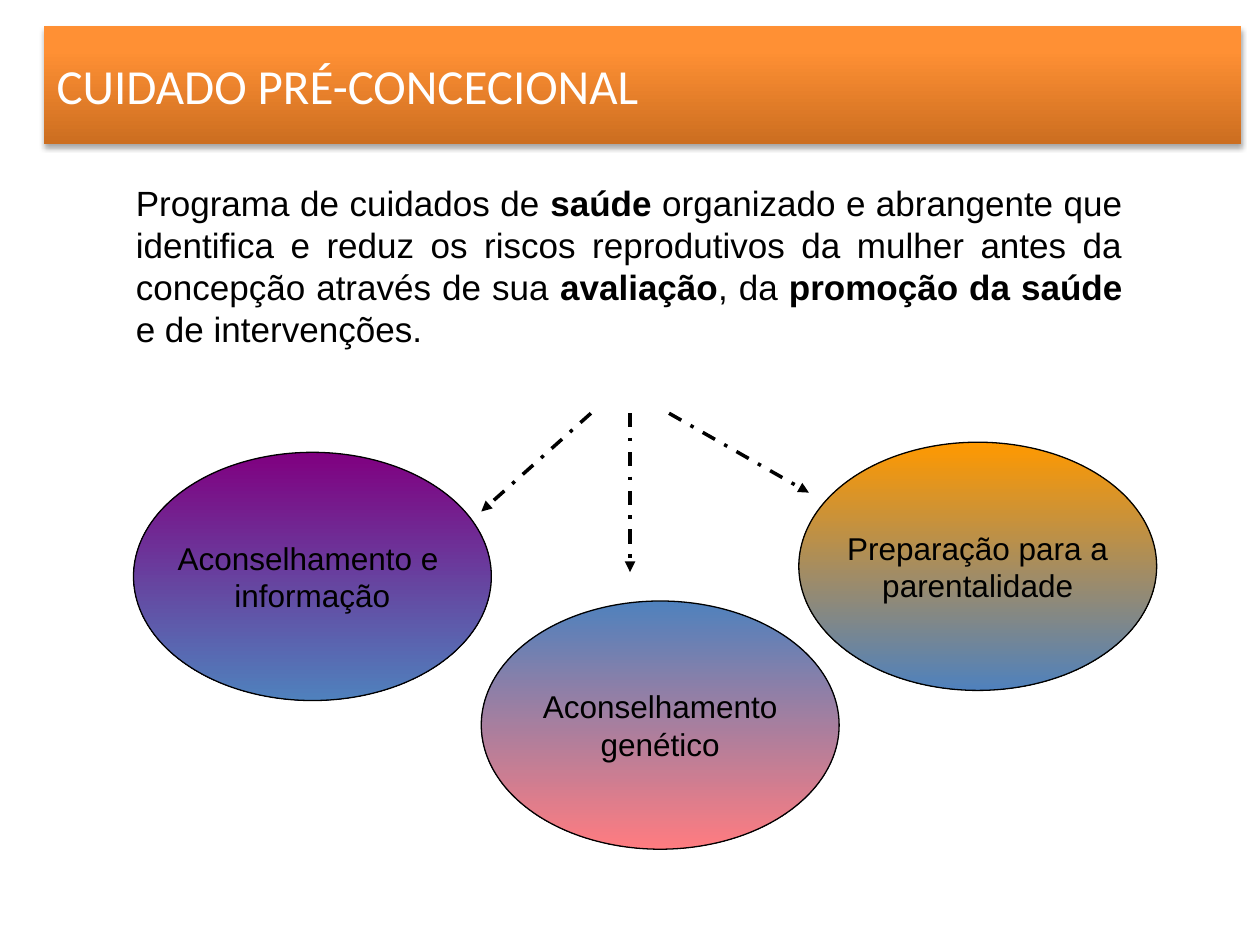
"""Build the preconception care slide."""
from copy import deepcopy
from dataclasses import dataclass

from lxml import etree
from pptx import Presentation
from pptx.dml.color import RGBColor
from pptx.enum.dml import MSO_LINE
from pptx.enum.shapes import MSO_CONNECTOR, MSO_SHAPE
from pptx.enum.text import MSO_ANCHOR, MSO_AUTO_SIZE, PP_ALIGN
from pptx.oxml import parse_xml
from pptx.oxml.ns import nsdecls, qn
from pptx.util import Inches, Pt

ELLIPSE, STRAIGHT = MSO_SHAPE.OVAL, MSO_CONNECTOR.STRAIGHT
DASH_DOT = MSO_LINE.DASH_DOT
MIDDLE = MSO_ANCHOR.MIDDLE
LEFT, CENTER, JUSTIFY = PP_ALIGN.LEFT, PP_ALIGN.CENTER, PP_ALIGN.JUSTIFY
GROW = MSO_AUTO_SIZE.SHAPE_TO_FIT_TEXT

COLORS = {
    "black": "000000", "white": "FFFFFF", "purple": "800080", "blue": "4F81BD",
    "pink": "FF7C80", "amber": "FF9900", "rust": "CC6E20",
    "orange": "FF9034", "light_orange": "FF9136",
}
TITLE_FONT = {"name": "Calibri", "size": Pt(28), "bold": False}
BODY_FONT = {"name": "Arial", "size": Pt(20)}
TOPIC_FONT = {"name": "Arial", "size": Pt(18)}
TOPIC_WIDTH, TOPIC_HEIGHT = 2.84, 1.97
ARROW_TOP = 3.28


@dataclass(frozen=True)
class Topic:
    left: float
    top: float
    lines: tuple[str, ...]
    top_color: str
    bottom_color: str


@dataclass(frozen=True)
class Arrow:
    start_x: float
    end_x: float
    end_y: float


TOPICS = (
    Topic(1.06, 3.59, ("Aconselhamento e ", "informação"), "purple", "blue"),
    Topic(3.82, 4.77, ("Aconselhamento", "genético"), "blue", "pink"),
    Topic(6.34, 3.51, ("Preparação para a", "parentalidade"), "amber", "blue"),
)
ARROWS = (Arrow(4.69, 3.82, 4.06), Arrow(5.31, 6.42, 3.91), Arrow(5, 5, 4.54))
DEFINITION = (
    ("Programa de cuidados de ", False),
    ("saúde", True),
    (" organizado e abrangente que identifica e reduz os riscos reprodutivos "
     "da mulher antes da concepção através de sua ", False),
    ("avaliação", True),
    (", da ", False),
    ("promoção da saúde", True),
    (" e de intervenções.", False),
)


def rgb(color: str) -> RGBColor:
    return RGBColor.from_string(COLORS[color])


def apply_format(target, values: dict) -> None:
    for attribute, value in values.items():
        setattr(target, attribute, value)


def add_run(paragraph, text: str, font: dict, color: str) -> None:
    run = paragraph.add_run()
    run.text = text
    apply_format(run.font, font)
    run.font.color.rgb = rgb(color)


def fill_gradient(shape, stops: tuple, angle: int) -> None:
    fill = shape.fill
    fill.gradient()
    fill.gradient_angle = angle
    stop_list = shape._element.spPr.find(".//" + qn("a:gsLst"))
    for _ in range(len(stops) - len(stop_list)):
        stop_list.append(deepcopy(stop_list[-1]))
    for stop, (position, color) in zip(fill.gradient_stops, stops):
        stop.position = position
        stop.color.rgb = rgb(color)


def draw_title(slide) -> None:
    title = slide.shapes.title
    apply_format(title, {"left": Inches(0.35), "top": Inches(0.21),
                         "width": Inches(9.5), "height": Inches(0.93)})
    fill_gradient(title, ((0, "rust"), (0.8, "orange"), (1, "light_orange")), 90)
    title.line.fill.background()
    title._element.spPr.append(parse_xml(
        f'<a:effectLst {nsdecls("a")}><a:outerShdw blurRad="{Pt(3.1)}" '
        f'dist="{Pt(1.8)}" dir="5400000" rotWithShape="0">'
        f'<a:srgbClr val="{COLORS["black"]}"><a:alpha val="35000"/></a:srgbClr>'
        '</a:outerShdw></a:effectLst>'))
    title.text_frame.vertical_anchor = MIDDLE
    paragraph = title.text_frame.paragraphs[0]
    paragraph.alignment = LEFT
    add_run(paragraph, "CUIDADO PRÉ-CONCECIONAL", TITLE_FONT, "white")


def draw_definition(slide) -> None:
    definition = slide.shapes.add_textbox(
        Inches(0.98), Inches(1.39), Inches(8.03), Inches(1.45))
    apply_format(definition.text_frame, {"word_wrap": True, "auto_size": GROW})
    paragraph = definition.text_frame.paragraphs[0]
    paragraph.alignment = JUSTIFY
    spacing = etree.SubElement(paragraph._p.get_or_add_pPr(), qn("a:spcBef"))
    etree.SubElement(spacing, qn("a:spcPct"), val="50000")
    for text, bold in DEFINITION:
        add_run(paragraph, text, BODY_FONT | {"bold": bold}, "black")


def draw_topic(slide, topic: Topic) -> None:
    oval = slide.shapes.add_shape(
        ELLIPSE, Inches(topic.left), Inches(topic.top),
        Inches(TOPIC_WIDTH), Inches(TOPIC_HEIGHT))
    oval.shadow.inherit = False
    fill_gradient(oval, ((0, topic.top_color), (1, topic.bottom_color)), 270)
    oval.line.color.rgb = rgb("black")
    oval.line.width = Pt(0.75)
    frame = oval.text_frame
    apply_format(frame, {"word_wrap": False, "vertical_anchor": MIDDLE})
    for index, line in enumerate(topic.lines):
        paragraph = frame.add_paragraph() if index else frame.paragraphs[0]
        paragraph.alignment = CENTER
        add_run(paragraph, line, TOPIC_FONT, "black")


def draw_arrow(slide, arrow: Arrow) -> None:
    connector = slide.shapes.add_connector(
        STRAIGHT, Inches(arrow.start_x), Inches(ARROW_TOP),
        Inches(arrow.end_x), Inches(arrow.end_y))
    connector.line.color.rgb = rgb("black")
    apply_format(connector.line, {"width": Pt(2), "dash_style": DASH_DOT})
    etree.SubElement(connector.line._get_or_add_ln(), qn("a:tailEnd"), type="triangle")
    etree.SubElement(connector._element.spPr, qn("a:effectLst"))


def main() -> None:
    presentation = Presentation()
    presentation.slide_width = Inches(10)
    presentation.slide_height = Inches(7.5)
    slide = presentation.slides.add_slide(presentation.slide_layouts[5])
    draw_title(slide)
    draw_definition(slide)
    for topic in TOPICS:
        draw_topic(slide, topic)
    for arrow in ARROWS:
        draw_arrow(slide, arrow)
    presentation.save("out.pptx")


if __name__ == "__main__":
    main()
